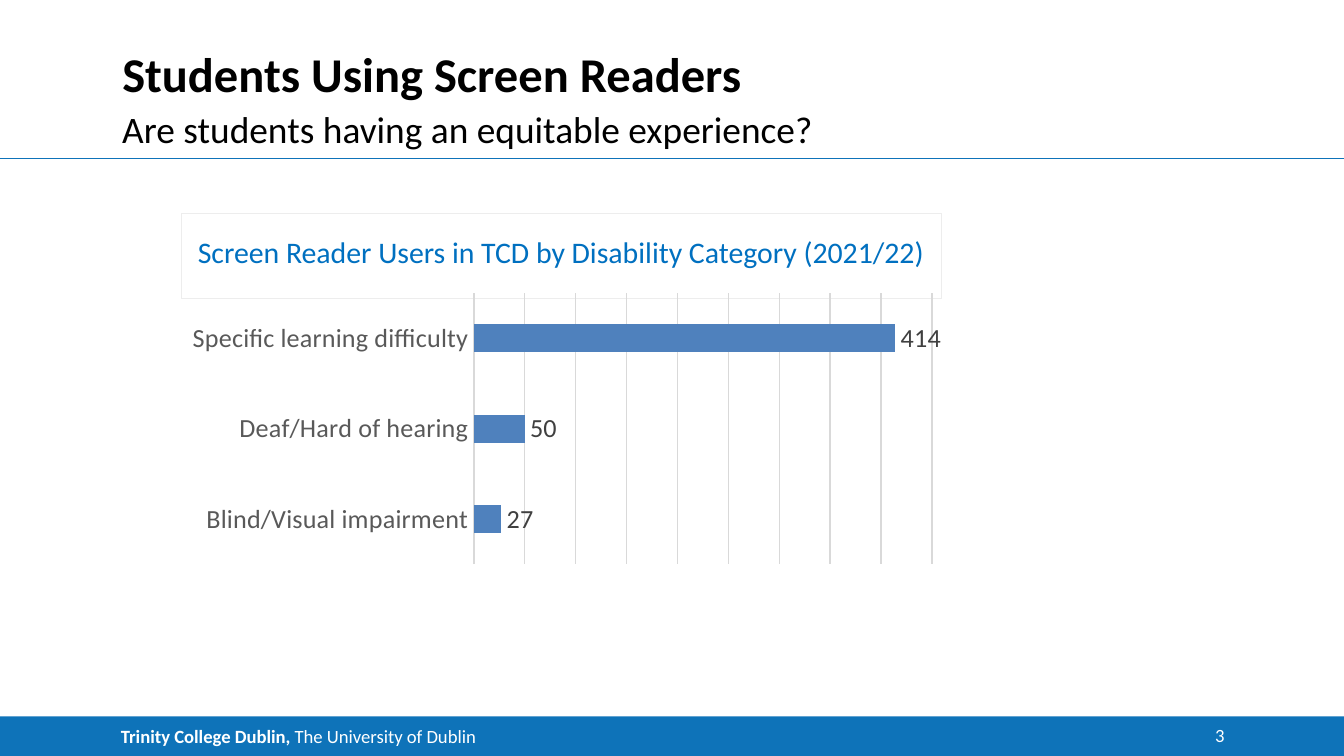
from lxml.etree import SubElement
from pptx import Presentation
from pptx.chart.data import CategoryChartData
from pptx.dml.color import RGBColor
from pptx.enum.chart import XL_CHART_TYPE, XL_LABEL_POSITION, XL_TICK_LABEL_POSITION, XL_TICK_MARK
from pptx.enum.shapes import MSO_CONNECTOR, MSO_SHAPE
from pptx.enum.text import MSO_ANCHOR, PP_ALIGN
from pptx.oxml import parse_xml
from pptx.oxml.ns import nsdecls, qn
from pptx.util import Inches, Pt

TITLE = "Students Using Screen Readers"
SUBTITLE = "Are students having an equitable experience?"
CHART_TITLE = "Screen Reader Users in TCD by Disability Category (2021/22)"
FOOTER = [("Trinity College Dublin, ", True), ("The University of Dublin", False)]
SLIDE_NUMBER = "3"
USERS = {
    "Blind/Visual impairment": 27,
    "Deaf/Hard of hearing": 50,
    "Specific learning difficulty": 414,
}

FONT = "Calibri"
BLUE, WHITE, BLACK, GRID_GREY = "0E73B9", "FFFFFF", "000000", "D9D9D9"
WIDTH = 10
HEIGHT = WIDTH * 9 / 16
MARGIN, RULE_TOP, FOOTER_TOP = 0.91, 1.18, 5.33
FRAME_LEFT, FRAME_WIDTH = 1.35, 5.65
PLOT_SHARES = {"x": 0.385, "y": 0.02, "w": 0.595, "h": 0.96}


def color(value):
    """Turn a hex string into a colour."""
    return RGBColor.from_string(value)


def box(left, top, width, height):
    """Convert a rectangle in inches to slide lengths."""
    return [Inches(length) for length in (left, top, width, height)]


def style_font(font, size, fill, bold=False):
    """Set the typeface, size, colour and weight of a font."""
    font.name, font.size, font.bold = FONT, Pt(size), bold
    font.color.rgb = color(fill)


def style_line(line, fill, width):
    """Set the colour and width of a line."""
    line.color.rgb = color(fill)
    line.width = Pt(width)


def write(shape, text, size=10, fill=BLACK, bold=False, align=PP_ALIGN.LEFT,
          anchor=MSO_ANCHOR.TOP, inset=(0, 0)):
    """Write a string or a list of (text, bold) runs into a shape."""
    frame = shape.text_frame
    frame.word_wrap = True
    frame.vertical_anchor = anchor
    frame.margin_left = frame.margin_right = Inches(inset[0])
    frame.margin_top = frame.margin_bottom = Inches(inset[1])
    paragraph = frame.paragraphs[0]
    paragraph.alignment = align
    for words, weight in [(text, bold)] if isinstance(text, str) else text:
        run = paragraph.add_run()
        run.text = words
        style_font(run.font, size, fill, weight)


def add_rectangle(slide, *place):
    """Add an unfilled, unshadowed rectangle."""
    shape = slide.shapes.add_shape(MSO_SHAPE.RECTANGLE, *box(*place))
    shape.shadow.inherit = False
    shape.fill.background()
    return shape


def add_footer(slide):
    """Add the footer band, the rule under the heading and the slide number."""
    band = add_rectangle(slide, 0, FOOTER_TOP, WIDTH, HEIGHT - FOOTER_TOP)
    band.fill.solid()
    band.fill.fore_color.rgb = color(BLUE)
    band.line.fill.background()
    write(band, FOOTER, fill=WHITE, anchor=MSO_ANCHOR.MIDDLE, inset=(0.9, 0.05))

    rule = slide.shapes.add_connector(
        MSO_CONNECTOR.STRAIGHT, 0, Inches(RULE_TOP), Inches(WIDTH), Inches(RULE_TOP))
    style_line(rule.line, BLUE, 0.75)
    SubElement(rule._element.spPr, qn("a:effectLst"))

    number = slide.shapes.add_textbox(*box(WIDTH - MARGIN - 0.3, 5.34, 0.32, 0.21))
    write(number, SLIDE_NUMBER, fill=WHITE, align=PP_ALIGN.RIGHT, anchor=MSO_ANCHOR.BOTTOM)


def add_heading(slide):
    """Place the title and the subtitle."""
    title = slide.shapes.title
    title.left, title.top, title.width, title.height = box(MARGIN, 0.3, WIDTH - 2 * MARGIN, 0.46)
    write(title, TITLE, size=26, bold=True, anchor=MSO_ANCHOR.BOTTOM)
    subtitle = slide.shapes.add_textbox(*box(MARGIN, 0.79, 9.14, 0.24))
    write(subtitle, SUBTITLE, size=20)


def add_users_chart(slide):
    """Add the bar chart of screen reader users."""
    data = CategoryChartData()
    data.categories = list(USERS)
    data.add_series("Series 1", list(USERS.values()))
    chart = slide.shapes.add_chart(
        XL_CHART_TYPE.BAR_CLUSTERED, *box(1.32, 2.14, 5.73, 2.1), data).chart
    chart.has_title = chart.has_legend = False
    style_font(chart.font, 10, BLACK)

    categories = chart.category_axis
    categories.major_tick_mark = categories.minor_tick_mark = XL_TICK_MARK.NONE
    categories.tick_label_position = XL_TICK_LABEL_POSITION.NEXT_TO_AXIS
    style_font(categories.tick_labels.font, 14, "595959")
    style_line(categories.format.line, GRID_GREY, 0.75)

    values = chart.value_axis
    values.visible = False
    values.minimum_scale, values.maximum_scale, values.major_unit = 0, 450, 50
    values.has_major_gridlines = True
    style_line(values.major_gridlines.format.line, GRID_GREY, 0.75)

    plot = chart.plots[0]
    plot.gap_width = 219
    plot.vary_by_categories = False
    series = plot.series[0]
    series.format.fill.solid()
    series.format.fill.fore_color.rgb = color("4F81BD")
    labels = series.data_labels
    labels.show_value = True
    labels.position = XL_LABEL_POSITION.OUTSIDE_END
    style_font(labels.font, 14, "404040")
    set_plot_layout(chart)


def set_plot_layout(chart):
    """Fix the inner plot area as shares of the chart."""
    area = chart._chartSpace.chart.plotArea
    for layout in area.findall(qn("c:layout")):
        area.remove(layout)
    shares = "".join(f'<c:{name} val="{share}"/>' for name, share in PLOT_SHARES.items())
    area.insert(0, parse_xml(
        f'<c:layout {nsdecls("c")}><c:manualLayout><c:layoutTarget val="inner"/>'
        f'<c:xMode val="edge"/><c:yMode val="edge"/>{shares}</c:manualLayout></c:layout>'))


def main():
    """Build the slide and save it."""
    presentation = Presentation()
    presentation.slide_width, presentation.slide_height = Inches(WIDTH), Inches(HEIGHT)
    slide = presentation.slides.add_slide(presentation.slide_layouts[5])
    add_footer(slide)
    add_heading(slide)
    frame = add_rectangle(slide, FRAME_LEFT, 1.59, FRAME_WIDTH, 0.63)
    style_line(frame.line, "EDEDED", 0.25)
    add_users_chart(slide)
    caption = slide.shapes.add_textbox(*box(FRAME_LEFT, 1.69, FRAME_WIDTH, 0.37))
    write(caption, CHART_TITLE, size=16, fill="0070C0", align=PP_ALIGN.CENTER, inset=(0.1, 0.05))
    presentation.save("out.pptx")


if __name__ == "__main__":
    main()
